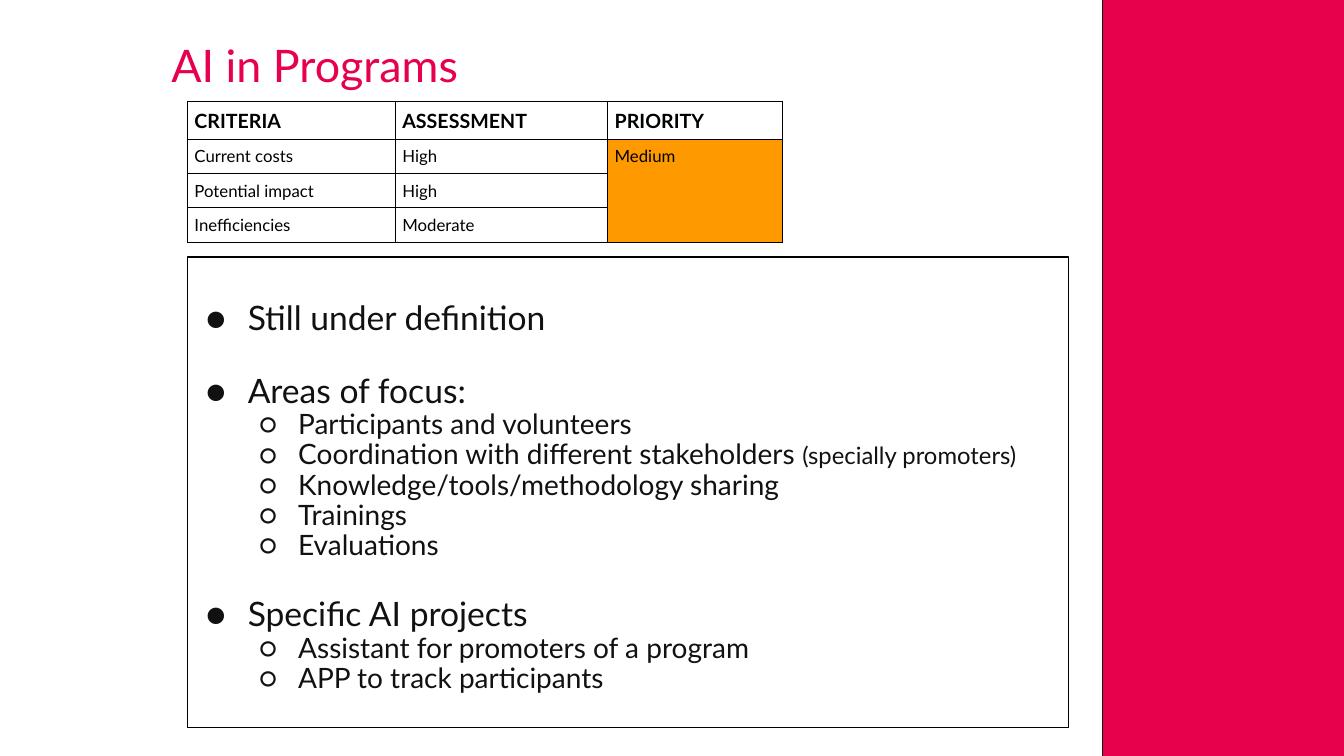
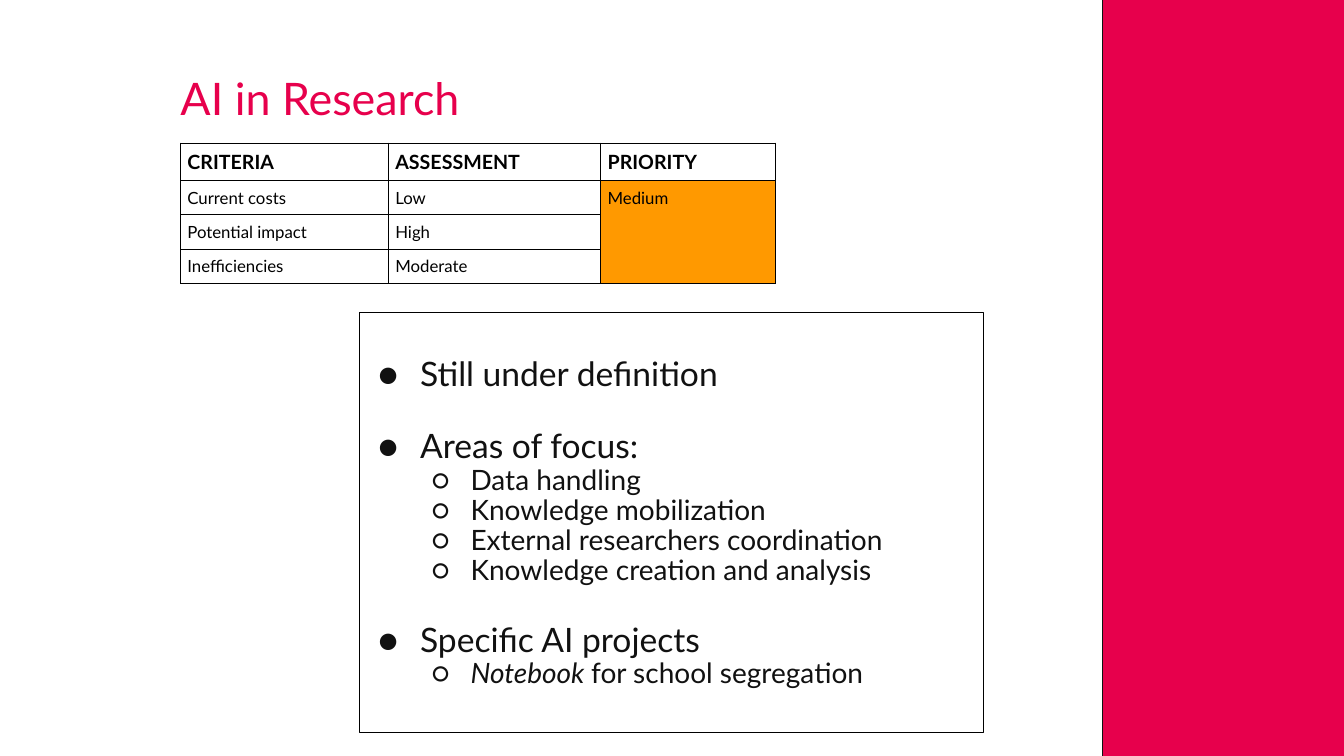
from dataclasses import dataclass

import lxml.etree
import pptx
import pptx.dml.color
import pptx.enum.shapes
import pptx.enum.text
import pptx.oxml.ns
import pptx.util

Pt = pptx.util.Pt
qn = pptx.oxml.ns.qn
PP_ALIGN = pptx.enum.text.PP_ALIGN
TOP = pptx.enum.text.MSO_ANCHOR.TOP
RECTANGLE = pptx.enum.shapes.MSO_SHAPE.RECTANGLE


def rgb(code):
    return pptx.dml.color.RGBColor.from_string(code)


@dataclass(frozen=True)
class Theme:
    font: str = "Lato"
    accent: str = "E7004C"
    ink: str = "111111"
    black: str = "000000"
    priority: str = "FF9900"
    title_size: float = 32
    header_size: float = 14
    cell_size: float = 12
    heading_size: float = 24
    point_size: float = 20
    aside_size: float = 17
    line_spacing: float = 0.9
    frame_width: float = 0.75
    grid_width: float = 0.5


THEME = Theme()
TITLE_SIZE = (765, 47.5)
BAND_BOX = (787.7, -4.3, 186.5, 548.6)
COLUMN_WIDTHS = (148.5, 151.7, 125)
HEADER_HEIGHT, ROW_HEIGHT, CELL_MARGIN = 26.8, 24.4, 5
BODY_TOP_MARGIN, GROUP_GAP = 32, 25.8
# Bullet character, left margin and hanging indent of each level
LEVELS = (("●", 36, -30), ("○", 72, -28))

CRITERIA = ("Current costs", "Potential impact", "Inefficiencies")

SLIDES = (
    {
        "title": "AI in Programs",
        "title_at": (122.4, 31),
        "table_at": (133.9, 72.7),
        "assessments": ("High", "High", "Moderate"),
        "priority": "Medium",
        "body_box": (133.9, 183.6, 629.3, 336.2),
        "groups": (
            ("Still under definition", ()),
            ("Areas of focus:", (
                "Participants and volunteers",
                (("Coordination with different stakeholders ", {}),
                 ("(specially promoters)", {"size": THEME.aside_size})),
                "Knowledge/tools/methodology sharing",
                "Trainings",
                "Evaluations",
            )),
            ("Specific AI projects", (
                "Assistant for promoters of a program",
                "APP to track participants",
            )),
        ),
    },
    {
        "title": "AI in Research",
        "title_at": (128.9, 54.7),
        "table_at": (128.9, 102.2),
        "assessments": ("Low", "High", "Moderate"),
        "priority": "Medium",
        "body_box": (257, 223.2, 445.7, 300.2),
        "groups": (
            ("Still under definition", ()),
            ("Areas of focus:", (
                "Data handling",
                "Knowledge mobilization",
                "External researchers coordination",
                "Knowledge creation and analysis",
            )),
            ("Specific AI projects", (
                (("Notebook ", {"italic": True}), ("for school segregation", {})),
            )),
        ),
    },
)


def format_run(run, size, color, bold=False, italic=False):
    run.font.name = THEME.font
    run.font.size = Pt(size)
    run.font.color.rgb = rgb(color)
    run.font.bold = bold
    run.font.italic = italic


def set_margins(target, left, top, right, bottom):
    target.margin_left, target.margin_top = Pt(left), Pt(top)
    target.margin_right, target.margin_bottom = Pt(right), Pt(bottom)


def add_rectangle(slide, box, line_color, fill_color=None):
    rectangle = slide.shapes.add_shape(RECTANGLE, *map(Pt, box))
    rectangle.shadow.inherit = False
    if fill_color:
        rectangle.fill.solid()
        rectangle.fill.fore_color.rgb = rgb(fill_color)
    else:
        rectangle.fill.background()
    rectangle.line.color.rgb = rgb(line_color)
    rectangle.line.width = Pt(THEME.frame_width)
    return rectangle


def place_title(slide, text, position):
    title = slide.shapes.title
    title.left, title.top = map(Pt, position)
    title.width, title.height = map(Pt, TITLE_SIZE)
    frame = title.text_frame
    frame.text = text
    frame.word_wrap = True
    frame.auto_size = pptx.enum.text.MSO_AUTO_SIZE.NONE
    frame.vertical_anchor = TOP
    set_margins(frame, 0, 0, 0, 0)
    paragraph = frame.paragraphs[0]
    paragraph.alignment = PP_ALIGN.LEFT
    paragraph.line_spacing = THEME.line_spacing
    format_run(paragraph.runs[0], THEME.title_size, THEME.accent)


def border_cell(cell):
    properties = cell._tc.get_or_add_tcPr()
    for index, side in enumerate(("lnL", "lnR", "lnT", "lnB")):
        line = lxml.etree.Element(qn(f"a:{side}"), w=str(Pt(THEME.grid_width)))
        fill = lxml.etree.SubElement(line, qn("a:solidFill"))
        lxml.etree.SubElement(fill, qn("a:srgbClr"), val=THEME.black)
        properties.insert(index, line)


def place_assessment(slide, position, assessments, priority):
    """Criteria table whose priority cell spans all the criteria."""
    rows = [("CRITERIA", "ASSESSMENT", "PRIORITY")]
    rows += [(criterion, assessment, "")
             for criterion, assessment in zip(CRITERIA, assessments)]
    rows[1] = rows[1][:2] + (priority,)
    heights = [HEADER_HEIGHT] + [ROW_HEIGHT] * len(CRITERIA)
    table = slide.shapes.add_table(
        len(rows), len(COLUMN_WIDTHS), *map(Pt, position),
        Pt(sum(COLUMN_WIDTHS)), Pt(sum(heights))).table
    table.first_row = table.horz_banding = False
    for column, width in zip(table.columns, COLUMN_WIDTHS):
        column.width = Pt(width)
    for row, height in zip(table.rows, heights):
        row.height = Pt(height)
    table.cell(1, 2).merge(table.cell(len(CRITERIA), 2))

    for row_index, row in enumerate(rows):
        is_header = row_index == 0
        for column_index, text in enumerate(row):
            cell = table.cell(row_index, column_index)
            set_margins(cell, *[CELL_MARGIN] * 4)
            if column_index == 2 and not is_header:
                cell.fill.solid()
                cell.fill.fore_color.rgb = rgb(THEME.priority)
            else:
                cell.fill.background()
            border_cell(cell)
            if cell.is_spanned:
                continue
            cell.text_frame.text = text
            paragraph = cell.text_frame.paragraphs[0]
            paragraph.alignment = PP_ALIGN.JUSTIFY
            size = THEME.header_size if is_header else THEME.cell_size
            format_run(paragraph.runs[0], size, THEME.black, bold=is_header)


def set_bullet(paragraph, level):
    character, margin, indent = LEVELS[level]
    properties = paragraph._p.get_or_add_pPr()
    properties.set("marL", str(Pt(margin)))
    properties.set("indent", str(Pt(indent)))
    color = lxml.etree.SubElement(properties, qn("a:buClr"))
    lxml.etree.SubElement(color, qn("a:srgbClr"), val=THEME.ink)
    lxml.etree.SubElement(properties, qn("a:buFont"), typeface=THEME.font)
    lxml.etree.SubElement(properties, qn("a:buChar"), char=character)
    paragraph.level = level


def write_bullet(paragraph, content, level):
    """Content is a string, or pairs of text and run formatting."""
    set_bullet(paragraph, level)
    paragraph.alignment = PP_ALIGN.LEFT
    paragraph.line_spacing = THEME.line_spacing
    size = (THEME.heading_size, THEME.point_size)[level]
    pieces = ((content, {}),) if isinstance(content, str) else content
    for text, formatting in pieces:
        run = paragraph.add_run()
        run.text = text
        format_run(run, **{"size": size, "color": THEME.ink, **formatting})


def place_body(slide, box, groups):
    """Framed list of headings, each with its points."""
    frame = add_rectangle(slide, box, THEME.black).text_frame
    frame.word_wrap = True
    frame.vertical_anchor = TOP
    set_margins(frame, 7.2, BODY_TOP_MARGIN, 7.2, 3.6)
    for index, (heading, points) in enumerate(groups):
        paragraph = frame.add_paragraph() if index else frame.paragraphs[0]
        write_bullet(paragraph, heading, 0)
        if index:
            paragraph.space_before = Pt(GROUP_GAP)
        for point in points:
            write_bullet(frame.add_paragraph(), point, 1)


def build_area_slide(presentation, area):
    slide = presentation.slides.add_slide(presentation.slide_layouts[5])
    place_title(slide, area["title"], area["title_at"])
    place_assessment(slide, area["table_at"], area["assessments"], area["priority"])
    add_rectangle(slide, BAND_BOX, THEME.ink, THEME.accent)
    place_body(slide, area["body_box"], area["groups"])


def main():
    presentation = pptx.Presentation()
    presentation.slide_width, presentation.slide_height = Pt(960), Pt(540)
    for area in SLIDES:
        build_area_slide(presentation, area)
    presentation.save("out.pptx")


if __name__ == "__main__":
    main()
